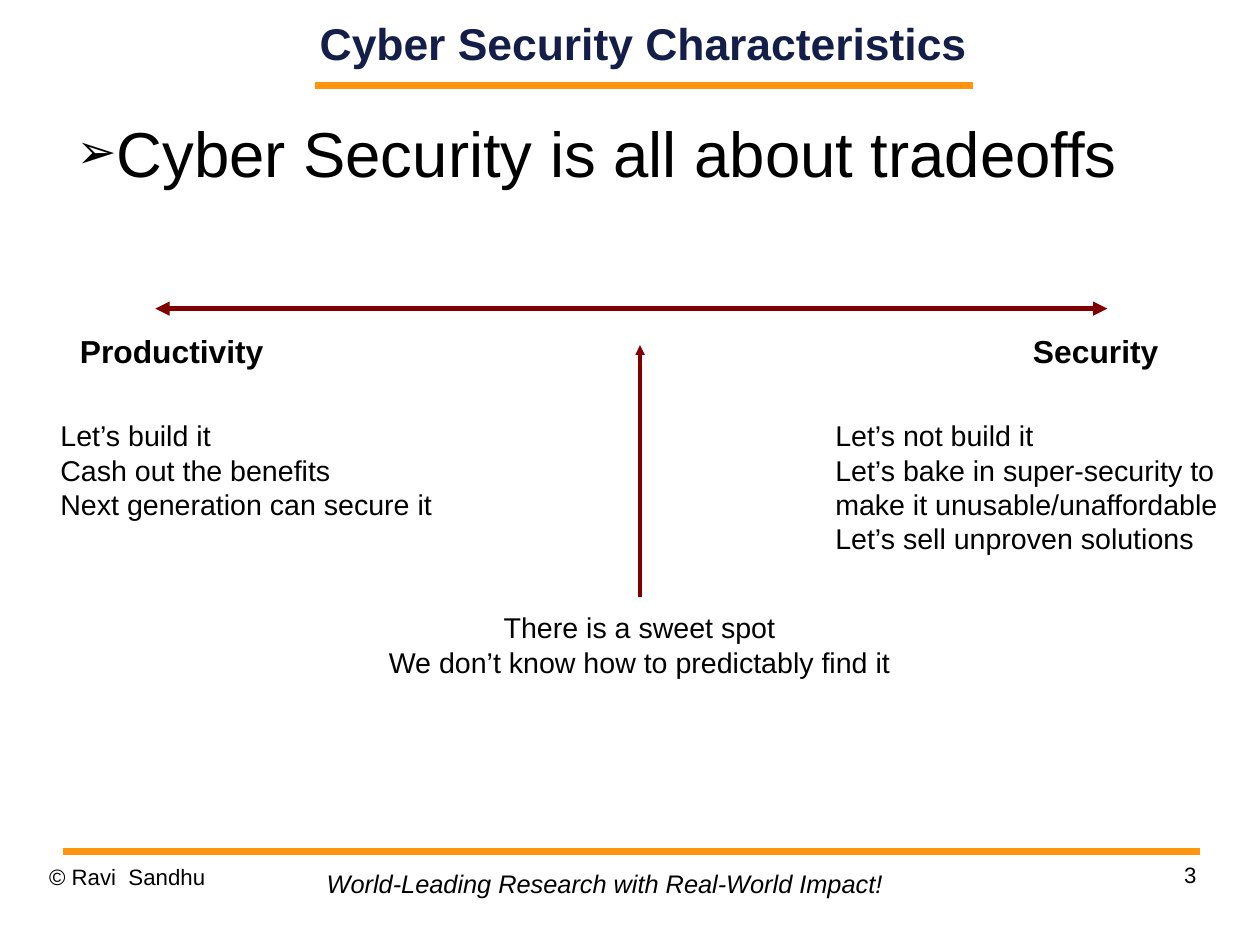
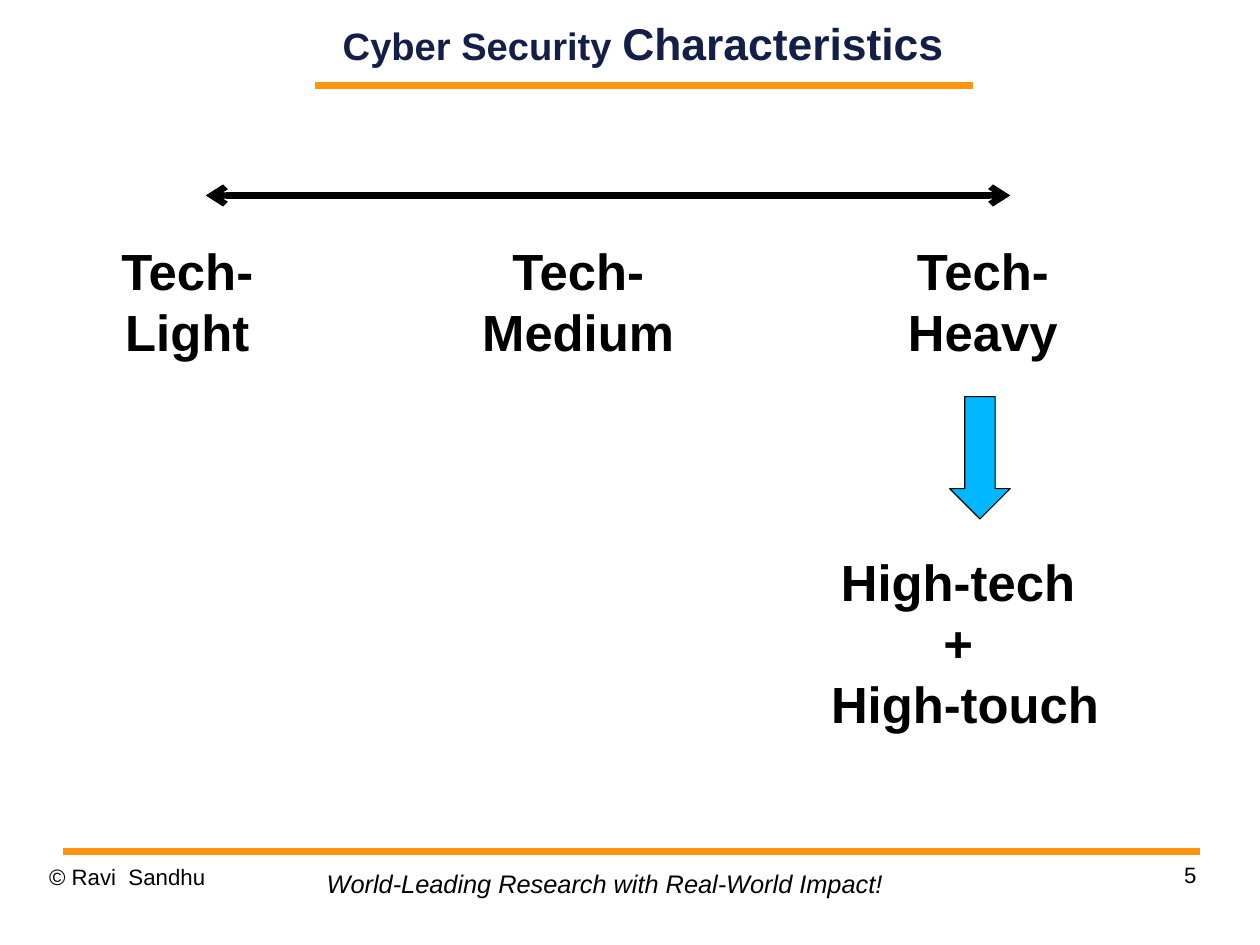
from lxml import etree
from pptx import Presentation
from pptx.dml.color import RGBColor
from pptx.enum.shapes import MSO_CONNECTOR, MSO_SHAPE
from pptx.enum.text import MSO_ANCHOR, MSO_AUTO_SIZE, PP_ALIGN
from pptx.oxml.ns import qn
from pptx.util import Emu, Pt

LEFT, CENTER, RIGHT = PP_ALIGN.LEFT, PP_ALIGN.CENTER, PP_ALIGN.RIGHT
TOP, MIDDLE = MSO_ANCHOR.TOP, MSO_ANCHOR.MIDDLE
FIXED = MSO_AUTO_SIZE.NONE
STRAIGHT = MSO_CONNECTOR.STRAIGHT
DOWN = MSO_SHAPE.DOWN_ARROW
TITLE_ONLY = 5

# Slide of 28 by 21 cm, in EMU
WIDTH, HEIGHT = 10080625, 7559675
FONT = "Arial"
NAVY, ORANGE, MAROON = "131F49", "FF950E", "800000"
BLACK, BLUE = "000000", "00B8FF"


def px(n):
    """Turn px, at 100 to the inch, into EMU."""
    return Emu(n * 9144)


def rgb(code):
    return RGBColor.from_string(code)


def add(parent, tag, **attrs):
    """Append an XML element to parent."""
    return etree.SubElement(parent, qn(tag), attrs)


class Deck:
    """Holds the house style and the slide being built."""

    def __init__(self):
        self.prs = Presentation()
        self.prs.slide_width, self.prs.slide_height = Emu(WIDTH), Emu(HEIGHT)
        self.slide = None

    def start(self, number, *title):
        """Open a slide with its title parts, rules and footer."""
        layout = self.prs.slide_layouts[TITLE_ONLY]
        self.slide = self.prs.slides.add_slide(layout)
        self.title(title)
        self.line(276, 75, 851, 75, ORANGE, 4.31)
        self.line(55, 745, 1050, 745, ORANGE, 4.31)
        foot = {"size": 14, "pad": False, "wrap": True, "space": 1.01}
        self.text(43, 755, 257, 57, "© Ravi  Sandhu", **foot)
        self.text(790, 753, 257, 57, str(number), align=RIGHT, **foot)
        self.text(276, 755, 508, 37,
                  "World-Leading Research with Real-World Impact!",
                  size=16, italic=True)

    def title(self, parts):
        """Fill the title placeholder from (text, size) parts."""
        shape = self.slide.shapes.title
        shape.left, shape.top = px(241), px(0)
        shape.width, shape.height = px(643), px(75)
        frame = shape.text_frame
        self.frame(frame, False, True, MIDDLE)
        para = frame.paragraphs[0]
        para.alignment = CENTER
        for words, size in parts:
            run = para.add_run()
            run.text = words
            self.font(run.font, size, NAVY, bold=True)

    def frame(self, frame, pad, wrap, anchor=TOP):
        frame.auto_size = FIXED
        frame.word_wrap = wrap
        frame.vertical_anchor = anchor
        if not pad:
            frame.margin_left = frame.margin_right = 0
            frame.margin_top = frame.margin_bottom = 0

    def font(self, font, size, color=BLACK, bold=False, italic=False):
        font.name, font.size = FONT, Pt(size)
        font.bold, font.italic = bold, italic
        font.color.rgb = rgb(color)

    def text(self, x, y, w, h, words, size=18, align=LEFT, bold=False,
             italic=False, pad=True, wrap=False, space=None):
        """Add a text box with one paragraph for each line of words."""
        box = self.slide.shapes.add_textbox(px(x), px(y), px(w), px(h))
        frame = box.text_frame
        self.frame(frame, pad, wrap)
        frame.text = words
        for para in frame.paragraphs:
            para.alignment = align
            if space:
                para.line_spacing = space
            for run in para.runs:
                self.font(run.font, size, bold=bold, italic=italic)
        return frame

    def point(self, x, y, w, h, words):
        """Add a large point with an arrowhead bullet."""
        frame = self.text(x, y, w, h, words, size=40, pad=False, wrap=True)
        for para in frame.paragraphs:
            props = para._p.get_or_add_pPr()
            props.set("marL", str(px(47)))
            props.set("indent", str(px(-35)))
            add(add(props, "a:buClr"), "a:srgbClr", val=BLACK)
            add(props, "a:buSzPct", val="75000")
            add(props, "a:buFont", typeface=FONT)
            add(props, "a:buChar", char="➢")

    def line(self, x1, y1, x2, y2, color, width, head=None, tail=None):
        """Draw a line; head and tail are arrow types at its start and end."""
        link = self.slide.shapes.add_connector(
            STRAIGHT, px(x1), px(y1), px(x2), px(y2))
        link.line.color.rgb = rgb(color)
        link.line.width = Pt(width)
        props = link.element.spPr
        stroke = props.find(qn("a:ln"))
        for tag, kind in (("a:headEnd", head), ("a:tailEnd", tail)):
            if kind:
                add(stroke, tag, type=kind)
        add(props, "a:effectLst")

    def block(self, x, y, w, h, kind, fill):
        shape = self.slide.shapes.add_shape(kind, px(x), px(y), px(w), px(h))
        shape.shadow.inherit = False
        shape.fill.solid()
        shape.fill.fore_color.rgb = rgb(fill)
        shape.line.color.rgb = rgb(BLACK)
        shape.line.width = Pt(0.75)


def trade(deck):
    deck.start(3, ("Cyber Security Characteristics", 28))
    deck.point(55, 100, 992, 248, "Cyber Security is all about tradeoffs")
    deck.line(136, 270, 969, 270, MAROON, 3, "triangle", "triangle")
    for x, w, name in ((60, 181, "Productivity"), (894, 130, "Security")):
        deck.text(x, 285, w, 43, name, size=20, bold=True)
    deck.text(43, 361, 345, 100,
              "Let’s build it\n"
              "Cash out the benefits\n"
              "Next generation can secure it")
    deck.text(721, 361, 355, 130,
              "Let’s not build it\n"
              "Let’s bake in super-security to\n"
              "make it unusable/unaffordable\n"
              "Let’s sell unproven solutions")
    deck.line(560, 302, 560, 522, MAROON, 2, "triangle")
    deck.text(330, 529, 459, 70,
              "There is a sweet spot\n"
              "We don’t know how to predictably find it", align=CENTER)


def tech(deck):
    deck.start(5, ("Cyber Security ", 24), ("Characteristics", 28))
    deck.line(180, 171, 884, 171, BLACK, 4, "arrow", "arrow")
    large = {"size": 32, "align": CENTER, "bold": True}
    levels = ((96, 136, "Light"), (411, 190, "Medium"), (784, 152, "Heavy"))
    for x, w, level in levels:
        deck.text(x, 205, w, 118, f"Tech-\n{level}", **large)
    deck.block(831, 347, 53, 107, DOWN, BLUE)
    deck.text(682, 477, 325, 172, "High-tech \n+ \nHigh-touch",
              wrap=True, **large)


def main():
    deck = Deck()
    trade(deck)
    tech(deck)
    deck.prs.save("out.pptx")


if __name__ == "__main__":
    main()
